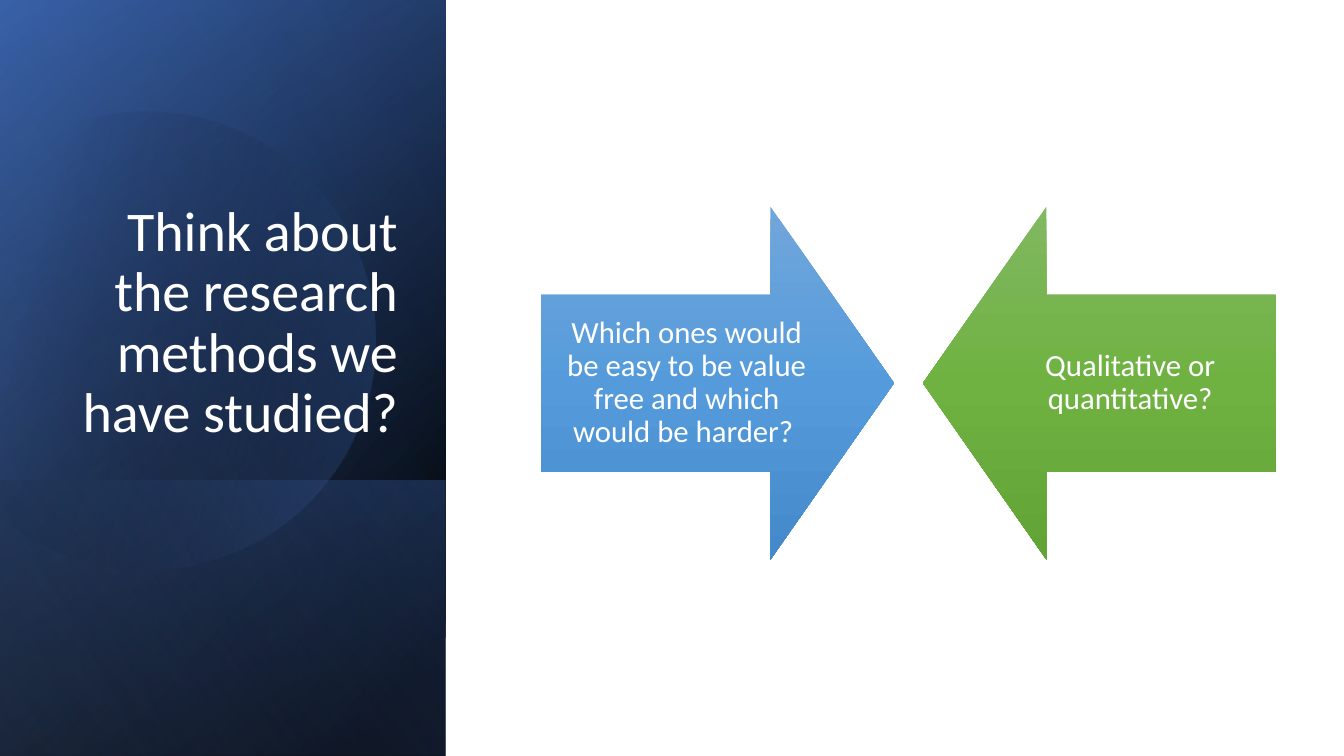
import itertools
import math

import pptx
import pptx.dml.color
import pptx.enum.shapes
import pptx.enum.text
import pptx.oxml
import pptx.oxml.ns
import pptx.util

Cm = pptx.util.Cm
SHAPE = pptx.enum.shapes.MSO_SHAPE
ALIGN = pptx.enum.text.PP_ALIGN
ANCHOR = pptx.enum.text.MSO_ANCHOR
NAMESPACE = pptx.oxml.ns.nsdecls("a")

# Content
TITLE = "Think about the research methods we have studied? "
ARROWS = [
    {"text": "Which ones would be easy to be value free and which would be harder? ",
     "shape": SHAPE.RIGHT_ARROW, "left": 13.64, "colors": "blue"},
    {"text": "Qualitative or quantitative?",
     "shape": SHAPE.LEFT_ARROW, "left": 23.26, "colors": "green"},
]

# Theme: gradient stops are (position %, colour, opacity %)
THEME = {
    "font": "Calibri", "text": "FFFFFF", "title_size": 40, "arrow_size": 22,
    "blue": [(0, "71A6DB", 100), (50, "559BDB", 100), (100, "448ACA", 100)],
    "green": [(0, "81B861", 100), (50, "6FB242", 100), (100, "62A336", 100)],
    "base": [(8, "000000", 100), (100, "2F5597", 100)],
    "glow": [(0, "000000", 0), (99, "4472C4", 46)],
    "floor": [(2, "4472C4", 29), (100, "000000", 30)],
    "disc": [(29, "000000", 0), (100, "4472C4", 43)],
    "sheen": [(0, "000000", 0), (99, "8FAADC", 11)],
}

# Layout in centimetres
SLIDE_WIDTH, SLIDE_HEIGHT = 33.87, 19.05
PANEL_WIDTH = 11.23
FLOOR_TOP = 12.11
TITLE_BOX = (1.62, 4.69, 8.66, 6.65)
ARROW_TOP, ARROW_SIZE, ARROW_INSET = 5.21, 8.89, 0.43
DISC_X, DISC_Y, DISC_RADIUS, DISC_TURN = 3.67, 8.49, 5.77, -16.1
DISC_DEGREES = [-118.9, -90, 0, 90, 151.1]


def paint(shape, stops, angle):
    """Fill a shape with a linear gradient, without outline or shadow."""
    marks = "".join(
        f'<a:gs pos="{position * 1000}"><a:srgbClr val="{color}">'
        f'<a:alpha val="{opacity * 1000}"/></a:srgbClr></a:gs>'
        for position, color, opacity in stops)
    gradient = pptx.oxml.parse_xml(
        f'<a:gradFill {NAMESPACE} rotWithShape="1"><a:gsLst>{marks}</a:gsLst>'
        f'<a:lin ang="{angle * 60000}" scaled="0"/></a:gradFill>')
    shape.shadow.inherit = False
    shape.line.fill.background()
    shape.fill.background()
    properties = shape._element.spPr
    properties.replace(properties.find(pptx.oxml.ns.qn("a:noFill")), gradient)


def write(box, text, size, align, anchor, inset=None):
    frame = box.text_frame
    frame.word_wrap = True
    frame.auto_size = pptx.enum.text.MSO_AUTO_SIZE.NONE
    frame.vertical_anchor = anchor
    if inset is not None:
        frame.margin_left = frame.margin_right = Cm(inset)
        frame.margin_top = frame.margin_bottom = Cm(inset)
    para = frame.paragraphs[0]
    para.alignment = align
    para.line_spacing = 0.9
    span = para.add_run()
    span.text = text
    span.font.name = THEME["font"]
    span.font.size = pptx.util.Pt(size)
    span.font.color.rgb = pptx.dml.color.RGBColor.from_string(THEME["text"])


def add_panel(page, top, stops, angle):
    """Cover the left panel from top to the slide's foot with a turned, mirrored rectangle."""
    height = SLIDE_HEIGHT - top
    shift = (PANEL_WIDTH - height) / 2
    panel = page.shapes.add_shape(SHAPE.RECTANGLE, Cm(shift), Cm(top - shift),
                                  Cm(height), Cm(PANEL_WIDTH))
    panel.rotation = 90
    panel._element.spPr.get_or_add_xfrm().set("flipH", "1")
    paint(panel, stops, angle)


def disc_point(degree, slope=0):
    """Point on the disc's rim, moved along its tangent by slope radii."""
    cos, sin = math.cos(math.radians(degree)), math.sin(math.radians(degree))
    return (Cm(DISC_X + DISC_RADIUS * (cos - slope * sin)),
            Cm(DISC_Y + DISC_RADIUS * (sin + slope * cos)))


def add_disc(page):
    """Draw a circle cut off by a chord, its rim made of Bézier curves."""
    rim = [disc_point(degree) for degree in DISC_DEGREES]
    builder = page.shapes.build_freeform(*rim[0])
    builder.add_line_segments(rim[1:], close=False)
    disc = builder.convert_to_shape()
    outline = next(disc._element.iter(pptx.oxml.ns.qn("a:path")))
    lines = outline.findall(pptx.oxml.ns.qn("a:lnTo"))
    for line, (start, end) in zip(lines, itertools.pairwise(DISC_DEGREES)):
        slope = 4 / 3 * math.tan(math.radians(end - start) / 4)
        points = disc_point(start, slope), disc_point(end, -slope), disc_point(end)
        marks = "".join(f'<a:pt x="{x - disc.left}" y="{y - disc.top}"/>' for x, y in points)
        curve = pptx.oxml.parse_xml(f"<a:cubicBezTo {NAMESPACE}>{marks}</a:cubicBezTo>")
        outline.replace(line, curve)
    outline.append(pptx.oxml.parse_xml(f"<a:close {NAMESPACE}/>"))
    disc.rotation = DISC_TURN
    paint(disc, THEME["disc"], 30)


def main():
    deck = pptx.Presentation()
    deck.slide_width, deck.slide_height = Cm(SLIDE_WIDTH), Cm(SLIDE_HEIGHT)
    page = deck.slides.add_slide(deck.slide_layouts[5])

    # Dark panel
    add_panel(page, 0, THEME["base"], 50)
    add_panel(page, 0, THEME["glow"], 30)
    add_panel(page, FLOOR_TOP, THEME["floor"], 130)
    add_disc(page)
    add_panel(page, 0, THEME["sheen"], 120)

    # Title, brought in front of the panel
    title = page.shapes.title
    title.left, title.top, title.width, title.height = map(Cm, TITLE_BOX)
    write(title, TITLE, THEME["title_size"], ALIGN.RIGHT, ANCHOR.BOTTOM)
    page.shapes._spTree.append(title._element)

    # Facing arrows
    for item in ARROWS:
        arrow = page.shapes.add_shape(item["shape"], Cm(item["left"]), Cm(ARROW_TOP),
                                      Cm(ARROW_SIZE), Cm(ARROW_SIZE))
        arrow.adjustments[0], arrow.adjustments[1] = 0.5, 0.35
        paint(arrow, THEME[item["colors"]], 90)
        write(arrow, item["text"], THEME["arrow_size"], ALIGN.CENTER, ANCHOR.MIDDLE,
              inset=ARROW_INSET)

    deck.save("out.pptx")


if __name__ == "__main__":
    main()
